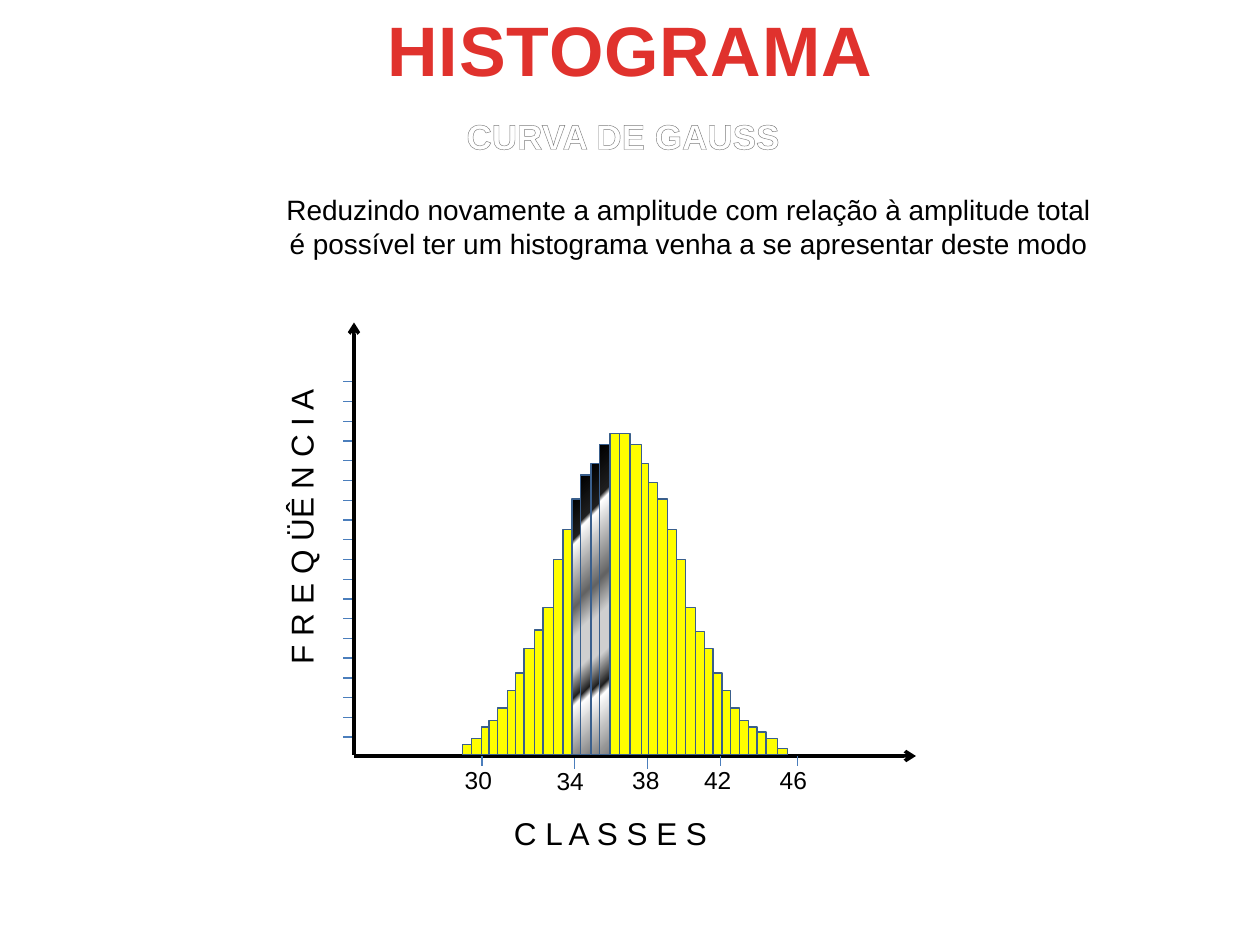
from dataclasses import dataclass, field
from typing import NamedTuple

from lxml.etree import SubElement
from pptx import Presentation
from pptx.dml.color import RGBColor
from pptx.enum.shapes import MSO_CONNECTOR, MSO_SHAPE
from pptx.enum.text import MSO_AUTO_SIZE, PP_ALIGN
from pptx.oxml import parse_xml
from pptx.oxml.ns import nsdecls, qn
from pptx.util import Pt


class Gradient(NamedTuple):
    angle: int
    stops: tuple[tuple[int, str], ...]


@dataclass(frozen=True)
class Theme:
    font: str = "Arial"
    black: str = "000000"
    tick: str = "4B7EBC"
    bar: str = "FFFF00"
    bar_edge: str = "3A5F8C"
    outline: str = "7D7D7D"
    title: Gradient = Gradient(90, ((25, "E0322D"), (100, "A2201C")))
    subtitle: Gradient = Gradient(90, (
        (0, "FFFFFF"), (9, "FFFFFF"), (50, "7F7F7F"),
        (79, "FFFFFF"), (100, "FFFFFF")))
    chrome: Gradient = Gradient(45, (
        (0, "000000"), (16, "1F1F1F"), (18, "FFFFFF"), (42, "636363"),
        (53, "CFCFCF"), (66, "CFCFCF"), (76, "1F1F1F"), (79, "FFFFFF"),
        (100, "7F7F7F")))
    title_size: int = 40
    subtitle_size: int = 20
    axis_size: int = 18
    body_size: int = 16
    label_size: int = 14
    thin: float = 0.75
    thick: float = 2


T = Theme()


@dataclass
class Label:
    lines: list[str]
    box: tuple[float, float, float, float]
    size: int
    paint: str | Gradient = T.black
    align: PP_ALIGN = PP_ALIGN.LEFT
    wrap: bool = True
    rotation: int = 0
    bold: bool = False
    run_attrs: dict[str, str] = field(default_factory=dict)
    outline: str | None = None


class ClassMark(NamedTuple):
    text: str
    left: float
    tick_x: float
    drop: float  # how far the tick sits below the axis


class Bar(NamedTuple):
    left: float
    top: float


def apply_paint(fill, paint: str | Gradient) -> None:
    if isinstance(paint, str):
        fill.solid()
        fill.fore_color.rgb = RGBColor.from_string(paint)
        return
    stops = "".join(f'<a:gs pos="{pos * 1000}"><a:srgbClr val="{rgb}"/></a:gs>'
                    for pos, rgb in paint.stops)
    grad = parse_xml(f'<a:gradFill {nsdecls("a")} rotWithShape="1"><a:gsLst>{stops}</a:gsLst>'
                     f'<a:lin ang="{paint.angle * 60000}" scaled="0"/></a:gradFill>')
    fill.background()
    parent = fill._xPr
    parent.replace(parent.find(qn("a:noFill")), grad)


def add_label(s, label: Label) -> None:
    sp = s.shapes.add_textbox(*(Pt(v) for v in label.box))
    sp.rotation = label.rotation
    tf = sp.text_frame
    for name, value in {"word_wrap": label.wrap,
                        "auto_size": MSO_AUTO_SIZE.SHAPE_TO_FIT_TEXT}.items():
        setattr(tf, name, value)
    for i, line in enumerate(label.lines):
        p = tf.add_paragraph() if i else tf.paragraphs[0]
        p.alignment = label.align
        r = p.add_run()
        r.text = line
        for name, value in {"name": T.font, "size": Pt(label.size),
                            "bold": label.bold}.items():
            setattr(r.font, name, value)
        apply_paint(r.font.fill, label.paint)
        rpr = r._r.get_or_add_rPr()
        for name, value in label.run_attrs.items():
            rpr.set(name, value)
        if label.outline:
            rpr.insert(0, parse_xml(
                f'<a:ln {nsdecls("a")} w="{Pt(0.83)}"><a:solidFill>'
                f'<a:srgbClr val="{label.outline}"/></a:solidFill></a:ln>'))


def add_line(s, x1: float, y1: float, x2: float, y2: float,
             color: str = T.tick, width: float = T.thin, arrow: bool = False) -> None:
    c = s.shapes.add_connector(MSO_CONNECTOR.STRAIGHT, Pt(x1), Pt(y1), Pt(x2), Pt(y2))
    c.line.color.rgb = RGBColor.from_string(color)
    c.line.width = Pt(width)
    if arrow:
        SubElement(c.line._get_or_add_ln(), qn("a:tailEnd"), type="arrow")
    SubElement(c._element.spPr, qn("a:effectLst"))


def add_bar(s, bar: Bar, right: float, bottom: float, paint: str | Gradient) -> None:
    sp = s.shapes.add_shape(MSO_SHAPE.RECTANGLE, Pt(bar.left), Pt(bar.top),
                            Pt(right - bar.left), Pt(bottom - bar.top))
    sp.shadow.inherit = False
    apply_paint(sp.fill, paint)
    sp.line.color.rgb = RGBColor.from_string(T.bar_edge)
    sp.line.width = Pt(T.thin)


LABELS = [
    Label(["HISTOGRAMA"], (180, 0, 360, 56.2), T.title_size, T.title,
          PP_ALIGN.CENTER, bold=True, run_attrs={"spc": "50"}),
    Label(["CURVA DE GAUSS"], (258.5, 61.9, 195.1, 31.7), T.subtitle_size, T.subtitle,
          PP_ALIGN.CENTER, wrap=False, bold=True, outline=T.outline),
    Label(["Reduzindo novamente a amplitude com relação à amplitude total",
           "é possível ter um histograma venha a se apresentar deste modo"],
          (106.6, 106.6, 573.8, 46.1), T.body_size, align=PP_ALIGN.CENTER),
    Label(["F R E Q ÜÊ N C I A"], (85.7, 285.8, 172.8, 28.8), T.axis_size,
          wrap=False, rotation=270),
    Label(["C L A S S E S"], (286.6, 461.5, 126, 28.8), T.axis_size, wrap=False),
]

CLASS_MARKS = [
    ClassMark("30", 258.5, 275.4, 0), ClassMark("34", 311, 328.3, 1.4),
    ClassMark("38", 354.2, 370.1, 1.4), ClassMark("42", 395.3, 411.8, 0),
    ClassMark("46", 438.5, 455.8, 0),
]

# Each bar reaches to the left edge of the next one
BARS = [Bar(*b) for b in [
    (264.2, 425.5), (269.3, 421.9), (275, 415.4), (279.4, 411.8), (284.4, 404.6),
    (290.2, 394.6), (294.5, 384.5), (299.5, 370.8), (305.3, 360), (310.3, 347),
    (316.1, 319.7), (321.8, 302.4), (326.9, 285.1), (331.9, 271.4), (337.7, 265),
    (342.7, 254.2), (348.5, 247.7), (354.2, 247.7), (360, 254.2), (366.5, 265),
    (370.8, 275.8), (375.8, 285.1), (381.6, 302.4), (386.6, 319.7), (391.7, 347),
    (397.4, 360.7), (402.5, 370.8), (407.5, 384.5), (412.6, 394.6), (417.6, 404.6),
    (422.6, 411.8), (427.7, 415.4), (432.7, 418.3), (437.8, 421.9), (444.2, 427.7),
]]
BARS_RIGHT, BARS_BOTTOM = 450, 431.3
HIGHLIGHTED = range(12, 16)
AXIS_X, AXIS_Y = 202.3, 432
TICK = 5.8


def main() -> None:
    prs = Presentation()
    prs.slide_width, prs.slide_height = Pt(720), Pt(540)
    s = prs.slides.add_slide(prs.slide_layouts[6])

    # Headings and axis titles
    for label in LABELS:
        add_label(s, label)

    # Frequency ticks, then both axes
    for i in range(19):
        y = 421.2 - 11.28 * i
        add_line(s, 201.6, y, 201.6 - TICK, y)
    add_line(s, AXIS_X, BARS_BOTTOM, AXIS_X, 184.3, T.black, T.thick, arrow=True)
    add_line(s, AXIS_X, AXIS_Y, 523.4, AXIS_Y, T.black, T.thick, arrow=True)

    # Class ticks and values
    for m in CLASS_MARKS:
        y = AXIS_Y + m.drop
        add_line(s, m.tick_x, y, m.tick_x, y + TICK)
        top = 434.2 if m.text == "34" else 433.4
        add_label(s, Label([m.text], (m.left, top, 33.8, 24.5), T.label_size))

    # Histogram bars
    rights = [b.left for b in BARS[1:]] + [BARS_RIGHT]
    for i, (bar, right) in enumerate(zip(BARS, rights)):
        add_bar(s, bar, right, BARS_BOTTOM, T.chrome if i in HIGHLIGHTED else T.bar)

    prs.save("out.pptx")


if __name__ == "__main__":
    main()
